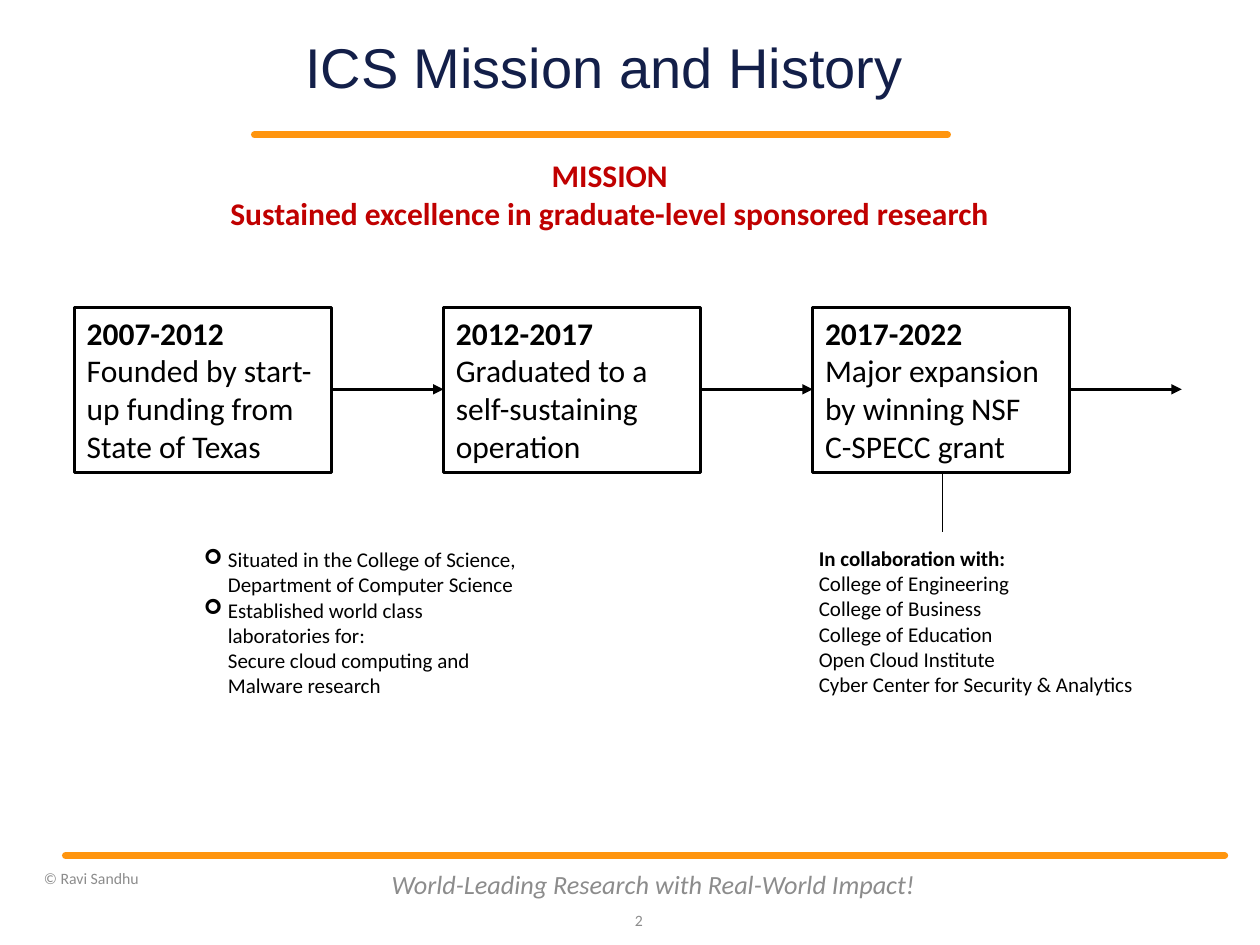
import pptx
import pptx.util
import pptx.dml.color
import pptx.enum.dml
import pptx.enum.shapes
import pptx.enum.text
import pptx.oxml.ns
from lxml import etree

Inches = pptx.util.Inches
Pt = pptx.util.Pt
ALIGN = pptx.enum.text.PP_ALIGN
MIDDLE = pptx.enum.text.MSO_ANCHOR.MIDDLE
COLORS = {"orange": "FF950E", "navy": "131F49", "red": "C00000",
          "gray": "8C8C8C", "black": "000000"}

ERAS = [
    ("2007-2012", "Founded by start-up funding from State of Texas"),
    ("2012-2017", "Graduated to a self-sustaining operation"),
    ("2017-2022", "Major expansion by winning NSF \nC-SPECC grant"),
]
PARTNERS = ["In collaboration with:", "College of Engineering",
            "College of Business", "College of Education",
            "Open Cloud Institute", "Cyber Center for Security & Analytics"]
FACTS = [
    (True, "Situated in the College of Science, Department of Computer Science"),
    (True, "Established world class laboratories for:"),
    (False, "Secure cloud computing and"),
    (False, "Malware research"),
]
LEFT, TOP, WIDE, HIGH, STEP = 0.59, 2.44, 2.04, 1.31, 2.93


def color(name):
    return pptx.dml.color.RGBColor.from_string(COLORS[name])


def write(shape, lines, size, hue="black", face="Calibri", align=ALIGN.LEFT,
          bold=0, italic=False):
    """Fill a shape with one paragraph per line; the first `bold` are bold."""
    frame = shape.text_frame
    frame.word_wrap = True
    for i, line in enumerate(lines):
        para = frame.paragraphs[0] if i == 0 else frame.add_paragraph()
        para.text = line
        para.alignment = align
        for run in para.runs:
            font = run.font
            font.size, font.name = Pt(size), face
            font.bold, font.italic = i < bold, italic
            font.color.rgb = color(hue)
    return frame


def add_text(slide, box, lines, size, **style):
    shape = slide.shapes.add_textbox(*map(Inches, box))
    return write(shape, lines, size, **style)


def add_line(slide, start, end, width, hue="black", arrow=False, cap=None):
    line = slide.shapes.add_connector(
        pptx.enum.shapes.MSO_CONNECTOR.STRAIGHT,
        *map(Inches, (*start, *end)))
    line.line.color.rgb = color(hue)
    line.line.width = Pt(width)
    qn = pptx.oxml.ns.qn
    stroke = line.line._get_or_add_ln()
    if cap:
        stroke.set("cap", cap)
    if arrow:
        etree.SubElement(stroke, qn("a:tailEnd"), type="triangle")
    etree.SubElement(line._element.spPr, qn("a:effectLst"))


def add_era(slide, left, lines):
    box = slide.shapes.add_shape(
        pptx.enum.shapes.MSO_SHAPE.RECTANGLE,
        *map(Inches, (left, TOP, WIDE, HIGH)))
    box.shadow.inherit = False
    box.fill.background()
    box.line.color.rgb = color("black")
    box.line.width = Pt(1.5)
    frame = write(box, lines, 18, bold=1)
    frame.vertical_anchor = pptx.enum.text.MSO_ANCHOR.TOP


def indent(para, bullet):
    """Hang the paragraph, with an arrow bullet if asked."""
    qn = pptx.oxml.ns.qn
    props = para._p.get_or_add_pPr()
    props.set("marL", str(Inches(0.19)))
    props.set("indent", str(Inches(-0.19) if bullet else 0))
    if bullet:
        etree.SubElement(props, qn("a:buFont"), typeface="Wingdings")
        etree.SubElement(props, qn("a:buChar"), char="➢")


def add_frame(slide):
    """Title, rules and footer."""
    add_line(slide, (2.02, 1.07), (7.52, 1.07), 4, "orange", cap="rnd")
    add_line(slide, (0.52, 6.79), (9.72, 6.79), 4, "orange", cap="rnd")
    title = add_text(slide, (2.17, 0.3, 5.25, 0.51),
                     ["ICS Mission and History"], 32, hue="navy",
                     face="Arial", align=ALIGN.CENTER)
    title.margin_left = title.margin_right = 0
    title.margin_top = title.margin_bottom = 0
    title.paragraphs[0].line_spacing = 0.9
    title.vertical_anchor = MIDDLE
    notes = [
        ((3, 6.82, 4.37, 0.4), "World-Leading Research with Real-World Impact!",
         15, ALIGN.CENTER, True),
        ((4.8, 7.1, 0.4, 0.4), "2", 9, ALIGN.RIGHT, False),
        ((0.25, 6.79, 2.75, 0.36), "© Ravi Sandhu", 9, ALIGN.LEFT, False),
    ]
    for box, line, size, align, italic in notes:
        frame = add_text(slide, box, [line], size, hue="gray",
                         align=align, italic=italic)
        frame.vertical_anchor = MIDDLE


def main():
    deck = pptx.Presentation()
    deck.slide_width, deck.slide_height = Inches(10), Inches(7.5)
    slide = deck.slides.add_slide(deck.slide_layouts[6])
    add_frame(slide)

    mission = add_text(
        slide, (1.66, 1.19, 6.36, 0.71),
        ["MISSION", "Sustained excellence in graduate-level sponsored research"],
        18, hue="red", align=ALIGN.CENTER, bold=2)
    mission.word_wrap = False

    for i, era in enumerate(ERAS):
        left = LEFT + i * STEP
        add_era(slide, left, era)
        add_line(slide, (left + WIDE, 3.09), (left + STEP, 3.09), 1.5,
                 arrow=True)

    add_text(slide, (6.4, 4.28, 2.71, 1.31), PARTNERS, 12, bold=1)
    facts = add_text(slide, (1.52, 4.29, 2.71, 1.51),
                     [line for _, line in FACTS], 12)
    for para, (bullet, _) in zip(facts.paragraphs, FACTS):
        indent(para, bullet)
    add_line(slide, (7.48, TOP + HIGH), (7.48, 4.22), 1)

    deck.save("out.pptx")


if __name__ == "__main__":
    main()
